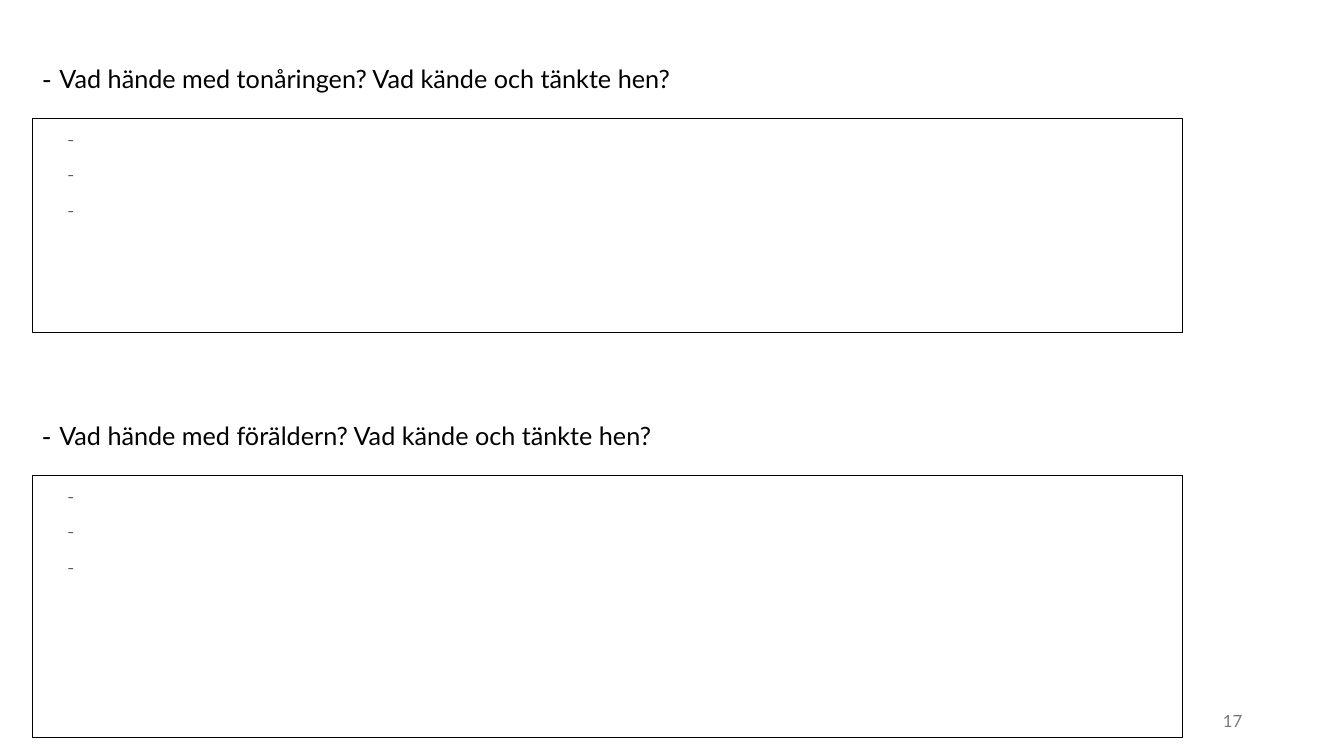
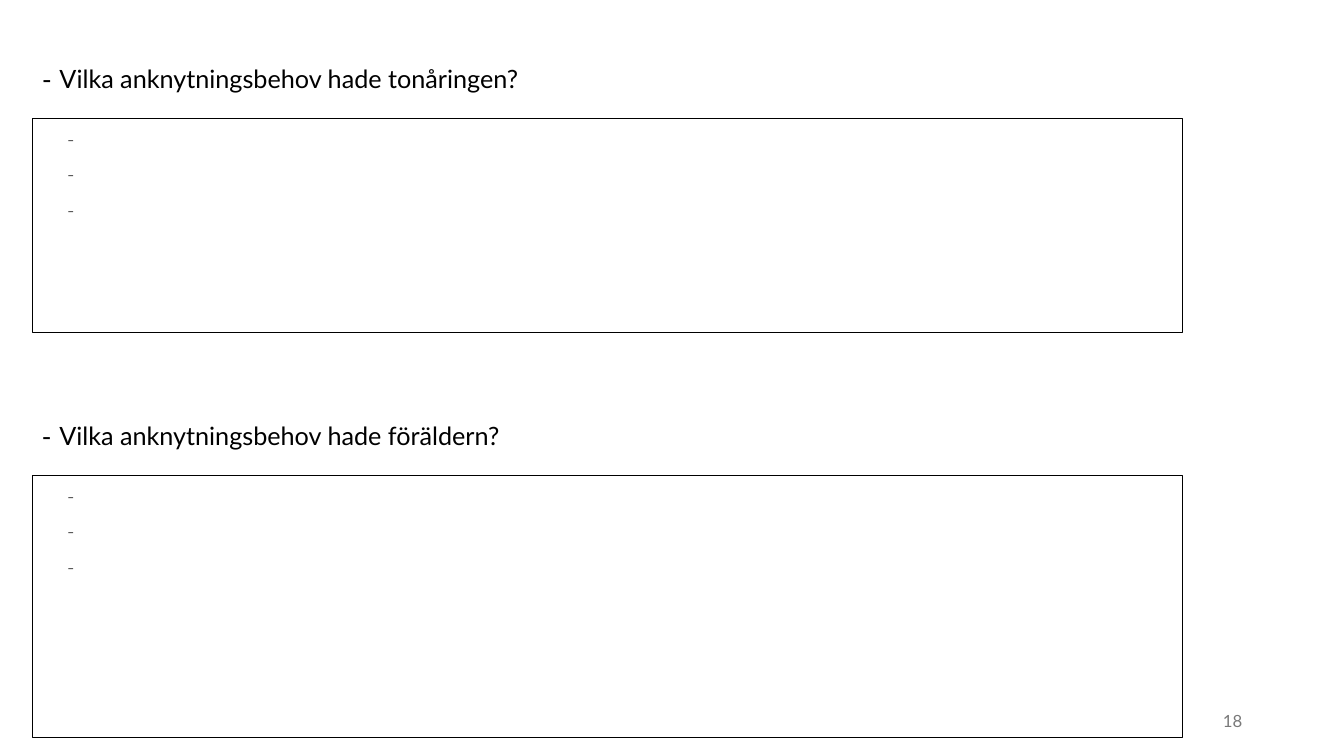
from dataclasses import dataclass

from pptx import Presentation
from pptx import util as u
from pptx.dml import color
from pptx.enum import shapes, text


@dataclass(frozen=True)
class Theme:
    """Colours, fonts and type sizes shared by the slides."""
    paper: color.RGBColor = color.RGBColor(0xFF, 0xFF, 0xFF)
    ink: color.RGBColor = color.RGBColor(0x00, 0x00, 0x00)
    answer_grey: color.RGBColor = color.RGBColor(0x59, 0x59, 0x59)
    number_grey: color.RGBColor = color.RGBColor(0x79, 0x79, 0x79)
    question_font: str = "Lato"
    dash_font: str = "DejaVu Sans"
    answer_font: str = "Cambria"
    question_size: int = 18
    answer_size: int = 15
    number_size: int = 12


THEME = Theme()
LEFT = 0.32
QUESTION_HEIGHT = 0.4
BOX_OFFSET = 0.6
BOX_WIDTH = 11.41
ANSWER_LINES = 3
SECTIONS = (
    {"top": 0.58, "question_width": 11.81, "box_height": 2.12},
    {"top": 4.12, "question_width": 6.67, "box_height": 2.6},
)
SLIDES = (
    (17, ("Vad hände med tonåringen? Vad kände och tänkte hen?",
          "Vad hände med föräldern? Vad kände och tänkte hen?")),
    (18, ("Vilka anknytningsbehov hade tonåringen?",
          "Vilka anknytningsbehov hade föräldern?")),
)


def apply_format(target, values):
    """Set each named attribute on the target."""
    for name, value in values.items():
        setattr(target, name, value)


def add_run(paragraph, content, font, size, rgb):
    """Append a run in the given font, size and colour."""
    run = paragraph.add_run()
    run.text = content
    apply_format(run.font, {"name": font, "size": u.Pt(size), "bold": False})
    run.font.color.rgb = rgb


def place(shape, left, top, width, height):
    """Position a shape by lengths in inches."""
    apply_format(shape, {
        "left": u.Inches(left), "top": u.Inches(top),
        "width": u.Inches(width), "height": u.Inches(height),
    })


def add_text_box(slide):
    """Add a text box to be placed and filled later."""
    return slide.shapes.add_textbox(0, 0, u.Inches(1), u.Inches(1))


def fill_question(shape, question, section):
    """Place and write a question led by a dash."""
    place(shape, LEFT, section["top"], section["question_width"], QUESTION_HEIGHT)
    apply_format(shape.text_frame, {
        "word_wrap": True,
        "auto_size": text.MSO_AUTO_SIZE.SHAPE_TO_FIT_TEXT,
        "vertical_anchor": text.MSO_ANCHOR.TOP,
    })
    paragraph = shape.text_frame.paragraphs[0]
    paragraph.alignment = text.PP_ALIGN.LEFT
    for content, font in (("- ", THEME.dash_font), (question, THEME.question_font)):
        add_run(paragraph, content, font, THEME.question_size, THEME.ink)


def add_answer_box(slide, section):
    """Add an outlined box with dashes for the answers."""
    box = slide.shapes.add_shape(shapes.MSO_SHAPE.RECTANGLE, 0, 0, 0, 0)
    place(box, LEFT, section["top"] + BOX_OFFSET, BOX_WIDTH, section["box_height"])
    box.shadow.inherit = False
    box.fill.solid()
    box.fill.fore_color.rgb = THEME.paper
    box.line.color.rgb = THEME.ink
    box.line.width = u.Pt(0.75)
    frame = box.text_frame
    apply_format(frame, {"word_wrap": True, "vertical_anchor": text.MSO_ANCHOR.TOP})
    for index in range(ANSWER_LINES):
        paragraph = frame.add_paragraph() if index else frame.paragraphs[0]
        apply_format(paragraph, {
            "alignment": text.PP_ALIGN.LEFT,
            "line_spacing": 1.07,
            "space_after": u.Pt(6),
        })
        properties = paragraph._p.get_or_add_pPr()
        properties.set("marL", str(u.Inches(0.5)))
        properties.set("indent", str(u.Inches(-0.25)))
        add_run(paragraph, "-", THEME.answer_font, THEME.answer_size, THEME.answer_grey)


def add_slide_number(slide, number):
    """Add the page number at the lower right."""
    box = add_text_box(slide)
    place(box, 9.42, 6.95, 3, 0.4)
    apply_format(box.text_frame, {
        "word_wrap": True, "vertical_anchor": text.MSO_ANCHOR.MIDDLE,
    })
    paragraph = box.text_frame.paragraphs[0]
    paragraph.alignment = text.PP_ALIGN.RIGHT
    add_run(paragraph, str(number), THEME.question_font, THEME.number_size, THEME.number_grey)


def add_question_slide(presentation, number, questions):
    """Add a slide with two questions, the first being its title."""
    slide = presentation.slides.add_slide(presentation.slide_layouts.get_by_name("Title Only"))
    question_shapes = (slide.shapes.title, add_text_box(slide))
    for shape, question, section in zip(question_shapes, questions, SECTIONS):
        fill_question(shape, question, section)
        add_answer_box(slide, section)
    add_slide_number(slide, number)


def main():
    """Build and save the presentation."""
    presentation = Presentation()
    apply_format(presentation, {
        "slide_width": u.Inches(13.33), "slide_height": u.Inches(7.5),
    })
    for number, questions in SLIDES:
        add_question_slide(presentation, number, questions)
    presentation.save("out.pptx")


if __name__ == "__main__":
    main()
